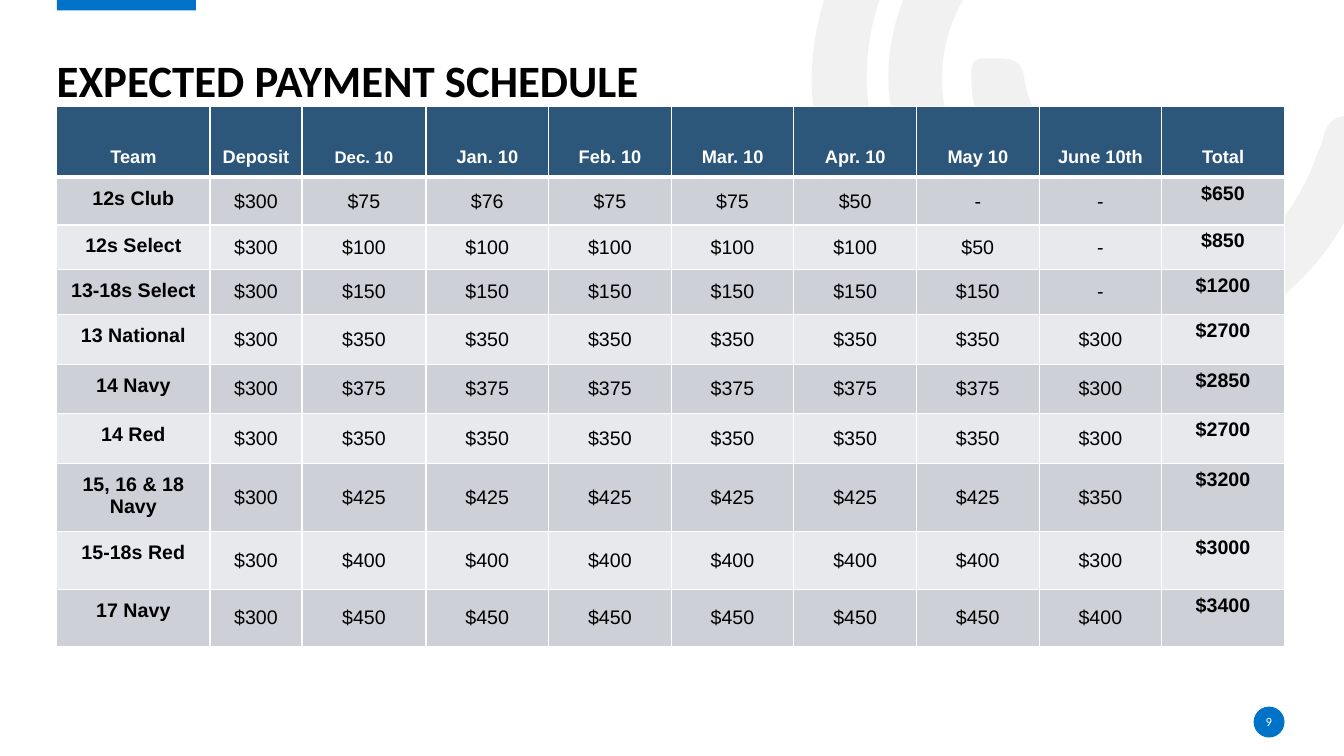
from itertools import chain
from lxml.etree import SubElement
from pptx import Presentation
from pptx.dml.color import RGBColor
from pptx.enum.shapes import MSO_SHAPE
from pptx.enum.text import MSO_ANCHOR, PP_ALIGN
from pptx.oxml.ns import qn
from pptx.util import Pt

# Content
TITLE = "EXPECTED PAYMENT SCHEDULE"
PAGE_NUMBER = "9"
HEADER = ["Team", "Deposit", "Dec. 10", "Jan. 10", "Feb. 10", "Mar. 10",
          "Apr. 10", "May 10", "June 10th", "Total"]
PAYMENTS = [
    ["12s Club", "$300", "$75", "$76", "$75", "$75", "$50", "-", "-", "$650"],
    ["12s Select", "$300", "$100", "$100", "$100", "$100", "$100", "$50", "-", "$850"],
    ["13-18s Select", "$300", "$150", "$150", "$150", "$150", "$150", "$150", "-", "$1200"],
    ["13 National", "$300", "$350", "$350", "$350", "$350", "$350", "$350", "$300", "$2700"],
    ["14 Navy", "$300", "$375", "$375", "$375", "$375", "$375", "$375", "$300", "$2850"],
    ["14 Red", "$300", "$350", "$350", "$350", "$350", "$350", "$350", "$300", "$2700"],
    ["15, 16 & 18 Navy", "$300", "$425", "$425", "$425", "$425", "$425", "$425", "$350", "$3200"],
    ["15-18s Red", "$300", "$400", "$400", "$400", "$400", "$400", "$400", "$300", "$3000"],
    ["17 Navy", "$300", "$450", "$450", "$450", "$450", "$450", "$450", "$400", "$3400"],
]

# Lengths in px, 300 to the inch
PX = 3048
SLIDE_SIZE = (4000, 2250)
COLUMN_WIDTHS = [456, 274, 369] + [365] * 7
ROW_HEIGHTS = [212, 142, 133, 133, 148, 148, 148, 202, 172, 172]
TABLE_LEFT, TABLE_TOP = 169, 316
WIDE_INSET, NARROW_INSET = 30, 15

# Background arcs on a 3 px grid: a start point, then Bezier curves (control, control, end)
ARC_GRID = 3 * PX
ARCS = [
    [[(851, 229)],
     [(799, 149), (787, 50), (838, -50)], [(890, -152), (976, -203), (1090, -207)],
     [(1105, -207), (1121, -210), (1131, -195)], [(1145, -175), (1127, -154), (1098, -154)],
     [(967, -154), (865, -59), (860, 68)], [(856, 181), (936, 281), (1046, 302)],
     [(1160, 324), (1270, 261), (1307, 152)], [(1309, 148), (1311, 144), (1312, 140)],
     [(1316, 119), (1327, 111), (1349, 117)], [(1373, 124), (1367, 141), (1361, 156)],
     [(1334, 245), (1278, 307), (1191, 341)], [(1070, 387), (936, 345), (851, 229)]],
    [[(922, 199)],
     [(862, 115), (869, 7), (940, -68)], [(951, -79), (962, -95), (980, -78)],
     [(995, -64), (997, -50), (979, -32)], [(925, 26), (920, 108), (965, 168)],
     [(1008, 229), (1088, 249), (1161, 215)], [(1182, 205), (1193, 212), (1203, 229)],
     [(1213, 250), (1197, 256), (1183, 263)], [(1096, 310), (983, 282), (922, 199)]],
    [[(987, 151)],
     [(975, 130), (964, 107), (964, 82)], [(964, 73), (961, 57), (976, 58)],
     [(992, 59), (1013, 53), (1016, 76)], [(1021, 110), (1036, 132), (1067, 148)],
     [(1088, 157), (1076, 176), (1072, 189)], [(1068, 206), (1055, 198), (1045, 194)],
     [(1021, 187), (1003, 170), (987, 151)]],
]

BLACK = RGBColor(0x00, 0x00, 0x00)
WHITE = RGBColor(0xFF, 0xFF, 0xFF)
BLUE = RGBColor(0x00, 0x72, 0xC7)
NAVY = RGBColor(0x2C, 0x56, 0x7A)
PALE_GRAY = RGBColor(0xE7, 0xE6, 0xE6)
BANDS = [RGBColor(0xCD, 0xD1, 0xD7), RGBColor(0xE8, 0xE9, 0xEC)]


def paint(shape, color):
    shape.shadow.inherit = False
    shape.fill.solid()
    shape.fill.fore_color.rgb = color
    shape.line.fill.background()


def style(paragraph, font_name, size, color, bold=False):
    font = paragraph.font
    font.name, font.size, font.bold = font_name, Pt(size), bold
    font.color.rgb = color


def add_text(slide, text, box, anchor):
    shape = slide.shapes.add_textbox(*(length * PX for length in box))
    frame = shape.text_frame
    frame.word_wrap = True
    frame.vertical_anchor = anchor
    frame.margin_left = frame.margin_right = frame.margin_top = frame.margin_bottom = 0
    frame.text = text
    return frame.paragraphs[0]


def add_arc(slide, segments):
    start, *points = chain.from_iterable(segments)
    builder = slide.shapes.build_freeform(*start, scale=ARC_GRID)
    builder.add_line_segments(points, close=True)
    arc = builder.convert_to_shape()
    paint(arc, PALE_GRAY)
    color = arc._element.spPr.find(qn("a:solidFill"))[0]
    SubElement(color, qn("a:alpha"), val="53000")

    # Turn each three straight segments into one Bezier curve
    outline = next(arc._element.iter(qn("a:path")))
    lines = outline.findall(qn("a:lnTo"))
    for first in range(0, len(lines), 3):
        curve = SubElement(outline, qn("a:cubicBezTo"))
        for line in lines[first:first + 3]:
            curve.append(line[0])
            outline.remove(line)
    outline.append(outline.find(qn("a:close")))


def add_borders(cell, row):
    widths = {"L": 1, "R": 1, "T": 3 if row == 1 else 1, "B": 3 if row == 0 else 1}
    properties = cell._tc.get_or_add_tcPr()
    for side, width in widths.items():
        line = SubElement(properties, qn(f"a:ln{side}"), w=str(Pt(width)))
        fill = SubElement(line, qn("a:solidFill"))
        SubElement(fill, qn("a:srgbClr"), val=str(WHITE))


def fill_cell(cell, text, row, column):
    is_header, is_total = row == 0, column == len(HEADER) - 1
    is_label = column == 0 or is_total
    add_borders(cell, row)
    cell.fill.solid()
    cell.fill.fore_color.rgb = NAVY if is_header else BANDS[(row - 1) % 2]
    cell.margin_left = cell.margin_right = WIDE_INSET * PX
    inset = NARROW_INSET if is_total and not is_header else WIDE_INSET
    cell.margin_top = cell.margin_bottom = inset * PX
    cell.text = text
    paragraph = cell.text_frame.paragraphs[0]
    paragraph.alignment = PP_ALIGN.CENTER
    if is_header:
        cell.vertical_anchor = MSO_ANCHOR.BOTTOM
        style(paragraph, "Arial", 12 if text == "Dec. 10" else 13, WHITE, True)
    else:
        cell.vertical_anchor = MSO_ANCHOR.TOP if is_label else MSO_ANCHOR.MIDDLE
        style(paragraph, "Arial", 14, BLACK, is_label)


def main():
    presentation = Presentation()
    presentation.slide_width, presentation.slide_height = (side * PX for side in SLIDE_SIZE)
    slide = presentation.slides.add_slide(presentation.slide_layouts[6])

    # Background arcs, top bar and page number disc
    for segments in ARCS:
        add_arc(slide, segments)
    for kind, box in [(MSO_SHAPE.RECTANGLE, (169, -6, 414, 37)),
                      (MSO_SHAPE.OVAL, (3731, 2103, 92, 92))]:
        paint(slide.shapes.add_shape(kind, *(length * PX for length in box)), BLUE)

    # Title and page number
    title = add_text(slide, TITLE, (169, 16, 3656, 303), MSO_ANCHOR.BOTTOM)
    title.line_spacing = 0.9
    style(title, "Calibri", 32, BLACK, True)
    number = add_text(slide, PAGE_NUMBER, (3728, 2118, 96, 60), MSO_ANCHOR.MIDDLE)
    number.alignment = PP_ALIGN.CENTER
    style(number, "Calibri", 9, WHITE)

    # Payment table
    rows = [HEADER] + PAYMENTS
    table = slide.shapes.add_table(
        len(rows), len(HEADER), TABLE_LEFT * PX, TABLE_TOP * PX,
        sum(COLUMN_WIDTHS) * PX, sum(ROW_HEIGHTS) * PX).table
    table.horz_banding = False
    for column, width in zip(table.columns, COLUMN_WIDTHS):
        column.width = width * PX
    for row, height in zip(table.rows, ROW_HEIGHTS):
        row.height = height * PX
    for row, texts in enumerate(rows):
        for column, text in enumerate(texts):
            fill_cell(table.cell(row, column), text, row, column)

    presentation.save("out.pptx")


if __name__ == "__main__":
    main()
